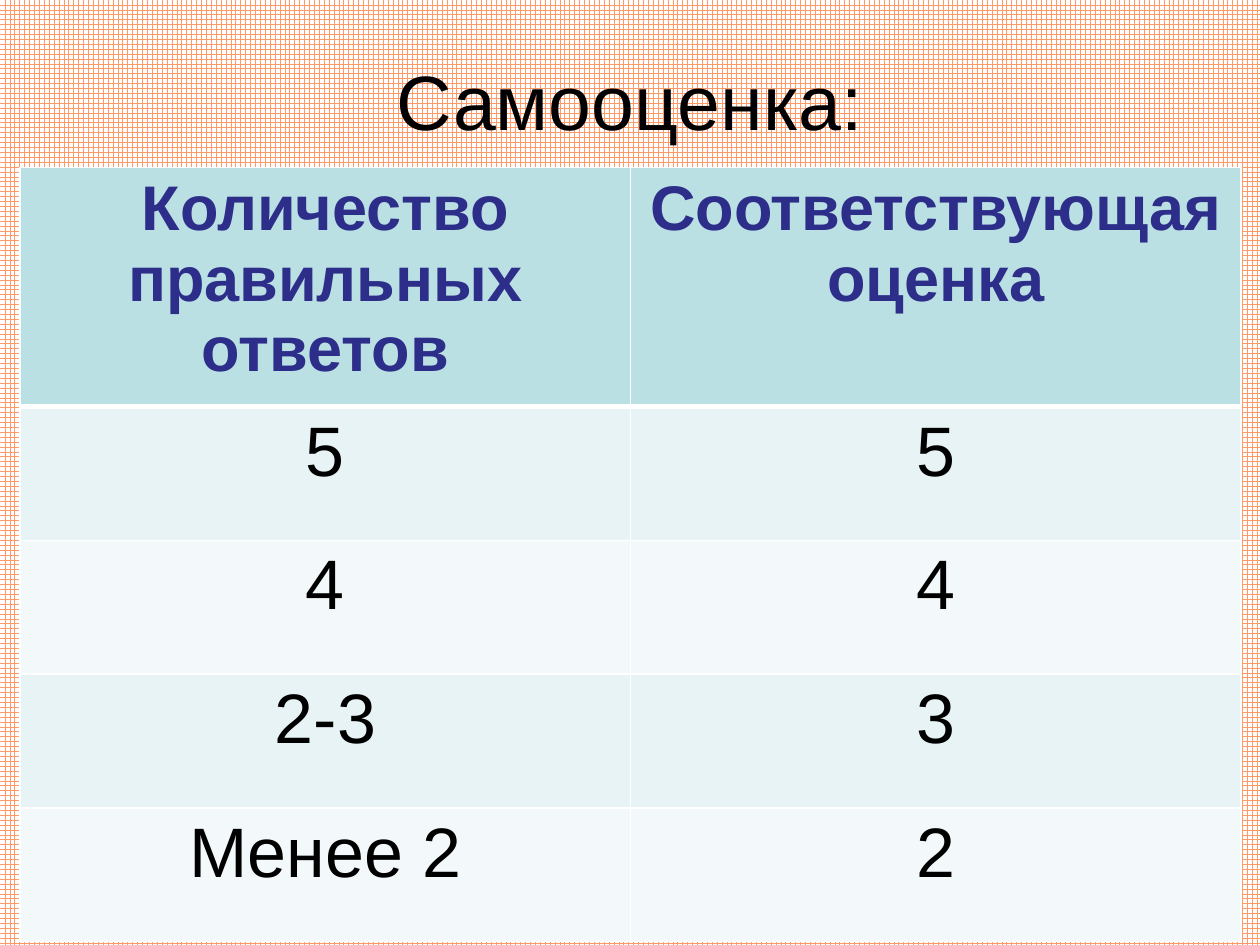
"""Build the self-assessment slide with its grading table."""
from dataclasses import dataclass

from lxml import etree
from pptx import Presentation
from pptx import util as u
from pptx.dml.color import RGBColor
from pptx.enum import dml, text
from pptx.oxml.ns import qn


@dataclass(frozen=True)
class Theme:
    font: str = "Arial"
    ink: str = "000000"
    heading: str = "2D2D8A"
    paper: str = "FFFFFF"
    grid: str = "FF9966"
    header_fill: str = "BBE0E3"
    bands: tuple = ("E7F3F4", "F3F9FA")
    title_size: int = 44
    header_size: int = 36
    body_size: int = 40


def write(tf, content, *, font, size, color, bold=False):
    tf.word_wrap = True
    p = tf.paragraphs[0]
    p.alignment = text.PP_ALIGN.CENTER
    r = p.add_run()
    r.text = content
    r.font.name, r.font.size, r.font.bold = font, u.Pt(size), bold
    r.font.color.rgb = RGBColor.from_string(color)


def border(cell, side, color, width):
    ln = etree.SubElement(cell._tc.get_or_add_tcPr(), qn(f"a:ln{side}"), w=str(u.Pt(width)))
    fill = etree.SubElement(ln, qn("a:solidFill"))
    etree.SubElement(fill, qn("a:srgbClr"), val=color)


class Deck:
    def __init__(self, theme, width=10, height=7.5):
        self.theme = theme
        self.prs = Presentation()
        self.prs.slide_width, self.prs.slide_height = u.Inches(width), u.Inches(height)
        self.s = self.prs.slides.add_slide(self.prs.slide_layouts[6])

    def box(self, x, y, w, h):
        width, height = self.prs.slide_width, self.prs.slide_height
        return int(x * width), int(y * height), int(w * width), int(h * height)

    def background(self):
        fill = self.s.background.fill
        fill.patterned()
        fill.pattern = dml.MSO_PATTERN.LARGE_GRID
        fill.fore_color.rgb = RGBColor.from_string(self.theme.grid)
        fill.back_color.rgb = RGBColor.from_string(self.theme.paper)

    def title(self, content, *place):
        tf = self.s.shapes.add_textbox(*self.box(*place)).text_frame
        tf.vertical_anchor = text.MSO_ANCHOR.MIDDLE
        write(tf, content, font=self.theme.font, size=self.theme.title_size, color=self.theme.ink)

    def table(self, rows, header_share, *place):
        t = self.theme
        x, y, w, h = self.box(*place)
        table = self.s.shapes.add_table(len(rows), len(rows[0]), x, y, w, h).table
        header_height = int(h * header_share)
        for i, row in enumerate(rows):
            head = i == 0
            table.rows[i].height = header_height if head else (h - header_height) // (len(rows) - 1)
            for j, content in enumerate(row):
                cell = table.cell(i, j)
                for side in "LRTB":
                    thick = (i, side) in ((0, "B"), (1, "T"))
                    border(cell, side, t.paper, 3 if thick else 1)
                cell.fill.solid()
                cell.fill.fore_color.rgb = RGBColor.from_string(
                    t.header_fill if head else t.bands[(i - 1) % 2])
                write(cell.text_frame, content, font=t.font, bold=head,
                      size=t.header_size if head else t.body_size,
                      color=t.heading if head else t.ink)


def main():
    deck = Deck(Theme())
    deck.background()
    deck.title("Самооценка:", 0.05, 0.04, 0.9, 0.13)
    grades = [
        ("Количество правильных ответов", "Соответствующая оценка"),
        ("5", "5"),
        ("4", "4"),
        ("2-3", "3"),
        ("Менее 2", "2"),
    ]
    deck.table(grades, 0.295, 0.016, 0.177, 0.969, 0.803)
    deck.prs.save("out.pptx")


if __name__ == "__main__":
    main()
